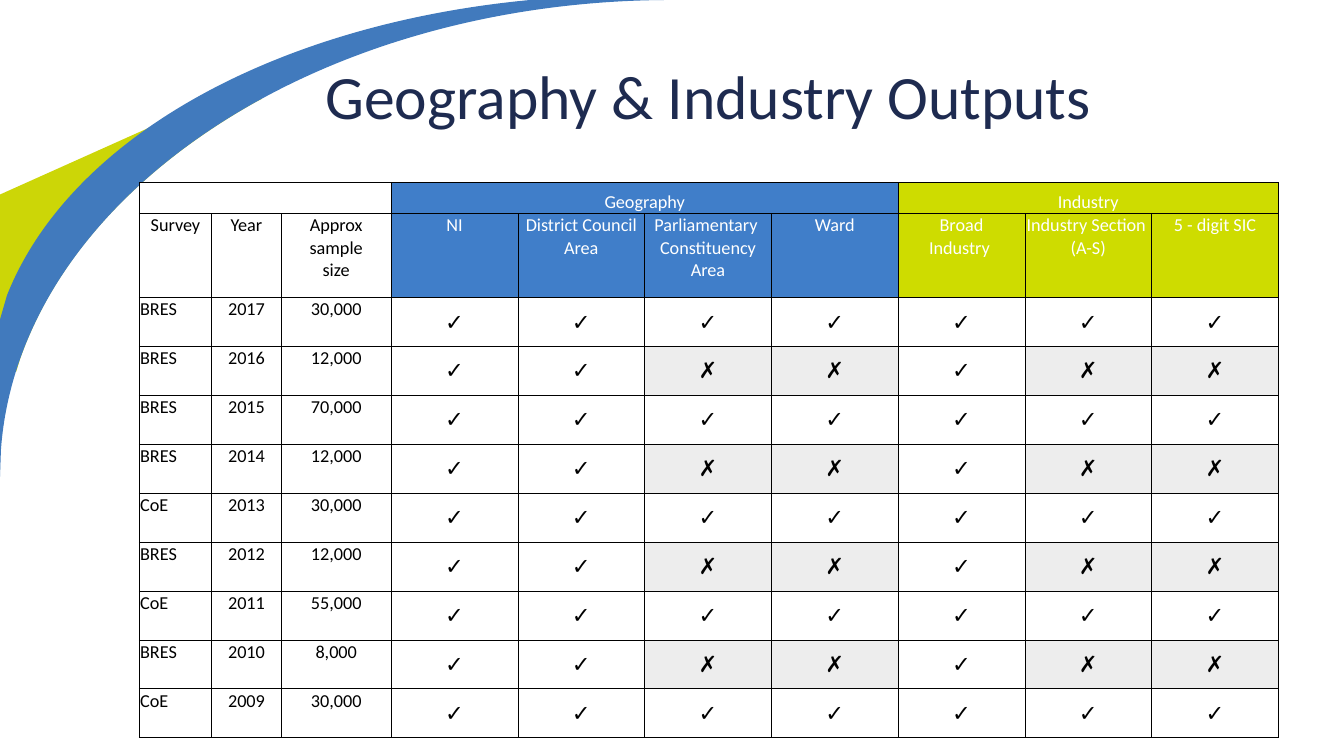
from lxml import etree
from pptx import Presentation
from pptx.dml.color import RGBColor
from pptx.enum.text import MSO_ANCHOR, PP_ALIGN
from pptx.oxml.ns import qn
from pptx.util import Inches, Pt

LEFT, CENTER = PP_ALIGN.LEFT, PP_ALIGN.CENTER
TOP, MIDDLE, BOTTOM = MSO_ANCHOR.TOP, MSO_ANCHOR.MIDDLE, MSO_ANCHOR.BOTTOM

WHITE = RGBColor(0xFF, 0xFF, 0xFF)
BLACK = RGBColor(0, 0, 0)
NAVY = RGBColor(0x1E, 0x2B, 0x50)
BLUE = RGBColor(0x40, 0x7E, 0xC9)
LIME = RGBColor(0xCE, 0xDC, 0x00)
GREY = RGBColor(0xED, 0xED, 0xED)
SWOOSH_BLUE = RGBColor(0x41, 0x7A, 0xBD)
SWOOSH_LIME = RGBColor(0xCC, 0xD6, 0x07)

TITLE = "Geography & Industry Outputs"
# Heading, fill, text colour, column names
GROUPS = [
    ("", WHITE, BLACK, ["Survey", "Year", "Approx\vsample\vsize"]),
    ("Geography", BLUE, WHITE, ["NI", "District Council Area",
                                "Parliamentary \vConstituency Area", "Ward"]),
    ("Industry", LIME, WHITE, ["Broad\vIndustry ", "Industry Section \v(A-S)",
                               "5 - digit SIC"]),
]
FULL, PARTIAL = "✓✓✓✓✓✓✓", "✓✓✗✗✓✗✗"
SURVEYS = [
    ("BRES", "2017", "30,000", FULL),
    ("BRES", "2016", "12,000", PARTIAL),
    ("BRES", "2015", "70,000", FULL),
    ("BRES", "2014", "12,000", PARTIAL),
    ("CoE", "2013", "30,000", FULL),
    ("BRES", "2012", "12,000", PARTIAL),
    ("CoE", "2011", "55,000", FULL),
    ("BRES", "2010", "8,000", PARTIAL),
    ("CoE", "2009", "30,000", FULL),
]

# Points in inches: pairs are line ends, sixes are cubic curves
LIME_WEDGE = [(2.52, 0.8), (2.6, 0.98), (2.54, 1.01),
              (1.4, 1.65, 0.56, 2.53, 0.2, 3.56), (0.16, 3.69),
              (0, 3.32), (0, 1.93)]
BLUE_ARC = [(7.02, 0), (7.16, 0), (6.67, 0),
            (3.1, 0, 0.19, 1.98, 0.01, 4.46), (0, 4.74), (0, 3.17),
            (0.07, 2.93), (0.69, 1.37, 2.72, 0.24, 5.26, 0), (5.49, 0)]
UNITS = 1000  # outline units per inch

TABLE_LEFT, TABLE_TOP, TABLE_WIDTH, TABLE_HEIGHT = 1.38, 1.81, 11.3, 5.51
LABEL_WIDTHS = [0.72, 0.69, 1.09]
MARK_COUNT = len(FULL)
MARK_WIDTH = (TABLE_WIDTH - sum(LABEL_WIDTHS)) / MARK_COUNT
COL_WIDTHS = LABEL_WIDTHS + [MARK_WIDTH] * MARK_COUNT
HEAD_HEIGHTS = [0.31, 0.83]
SURVEY_HEIGHT = (TABLE_HEIGHT - sum(HEAD_HEIGHTS)) / len(SURVEYS)
ROW_HEIGHTS = HEAD_HEIGHTS + [SURVEY_HEIGHT] * len(SURVEYS)


def add_swoosh(s, outline, color):
    """Draw an outline by its end points, then bend the sides that are curves."""
    steps = [[round(v * UNITS) for v in step] for step in outline]
    ends = [step[-2:] for step in steps]
    builder = s.shapes.build_freeform(*ends[0], scale=Inches(1) / UNITS)
    builder.add_line_segments(ends[1:], close=True)
    sp = builder.convert_to_shape()
    sp.shadow.inherit = False
    sp.fill.solid()
    sp.fill.fore_color.rgb = color
    sp.line.fill.background()

    left, top = (min(axis) for axis in zip(*ends))
    sides = list(sp._element.iter(qn("a:lnTo")))
    for side, step in zip(sides, steps[1:]):
        if len(step) == 6:
            side.tag = qn("a:cubicBezTo")
            side.clear()
            for x, y in zip(step[::2], step[1::2]):
                etree.SubElement(side, qn("a:pt"), x=str(x - left), y=str(y - top))


def add_title(s):
    sp = s.shapes.add_textbox(Inches(3.13), Inches(0.33), Inches(9.28), Inches(1.31))
    tf = sp.text_frame
    tf.word_wrap = True
    tf.vertical_anchor = MIDDLE
    tf.text = TITLE
    p = tf.paragraphs[0]
    p.line_spacing = 0.9
    font = p.runs[0].font
    font.size, font.name = Pt(44), "Calibri"
    font.color.rgb = NAVY


def add_borders(cell):
    tc_pr = cell._tc.get_or_add_tcPr()
    for side in ("a:lnL", "a:lnR", "a:lnT", "a:lnB"):
        ln = etree.SubElement(tc_pr, qn(side), w=str(Pt(0.5)))
        fill = etree.SubElement(ln, qn("a:solidFill"))
        etree.SubElement(fill, qn("a:srgbClr"), val=str(BLACK))


def fill_cell(cell, text, fill=WHITE, color=BLACK, align=CENTER, anchor=TOP,
              size=13, face="Calibri"):
    add_borders(cell)
    cell.fill.solid()
    cell.fill.fore_color.rgb = fill
    cell.margin_left = cell.margin_right = cell.margin_top = Inches(0.01)
    cell.margin_bottom = 0
    cell.vertical_anchor = anchor
    cell.text = text
    p = cell.text_frame.paragraphs[0]
    p.alignment = align
    for r in p.runs:
        r.font.size, r.font.name = Pt(size), face
        r.font.color.rgb = color
    # Keeps empty cells from stretching their row
    p._p.get_or_add_endParaRPr().set("sz", str(size * 100))


def add_outputs_table(s):
    frame = s.shapes.add_table(
        len(ROW_HEIGHTS), len(COL_WIDTHS), Inches(TABLE_LEFT), Inches(TABLE_TOP),
        Inches(TABLE_WIDTH), Inches(TABLE_HEIGHT))
    table = frame.table
    table.first_row = table.horz_banding = False
    for column, width in zip(table.columns, COL_WIDTHS):
        column.width = Inches(width)
    for row, height in zip(table.rows, ROW_HEIGHTS):
        row.height = Inches(height)

    first = 0
    for heading, fill, color, names in GROUPS:
        for i, name in enumerate(names):
            fill_cell(table.cell(0, first + i), "" if i else heading,
                      fill, color, anchor=BOTTOM)
            fill_cell(table.cell(1, first + i), name, fill, color)
        last = first + len(names) - 1
        table.cell(0, first).merge(table.cell(0, last))
        first = last + 1

    for row, (*labels, marks) in enumerate(SURVEYS, len(HEAD_HEIGHTS)):
        for col, label in enumerate(labels):
            fill_cell(table.cell(row, col), label, align=CENTER if col else LEFT)
        for col, mark in enumerate(marks, len(labels)):
            fill_cell(table.cell(row, col), mark, GREY if mark == "✗" else WHITE,
                      anchor=MIDDLE, size=16, face="Arial")


def main():
    prs = Presentation()
    prs.slide_width, prs.slide_height = Inches(13.33), Inches(7.5)
    s = prs.slides.add_slide(prs.slide_layouts[6])
    add_swoosh(s, LIME_WEDGE, SWOOSH_LIME)
    add_swoosh(s, BLUE_ARC, SWOOSH_BLUE)
    add_title(s)
    add_outputs_table(s)
    prs.save("out.pptx")


if __name__ == "__main__":
    main()
